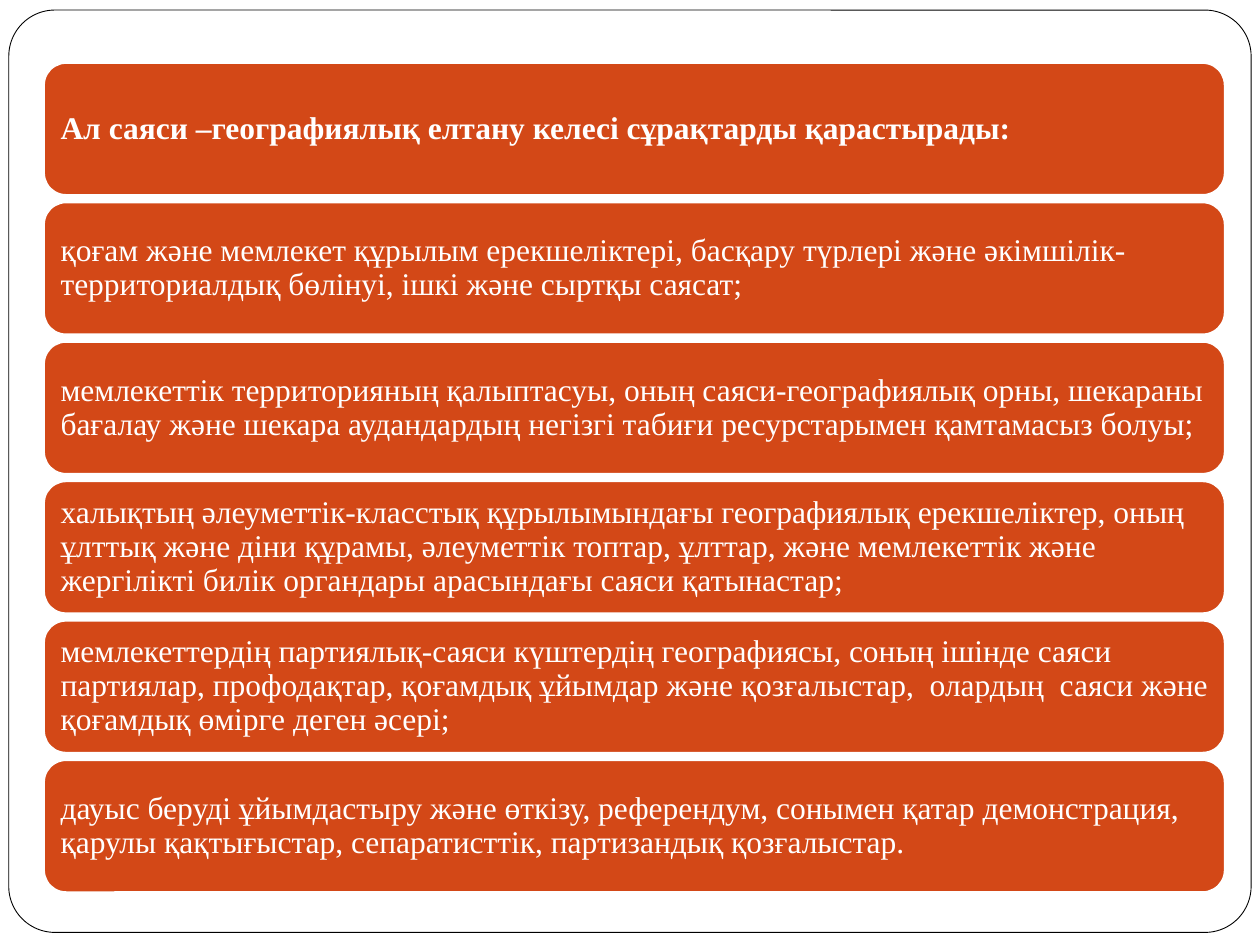
from pptx import Presentation
from pptx.dml.color import RGBColor
from pptx.enum.shapes import MSO_SHAPE
from pptx.enum.text import MSO_ANCHOR, PP_ALIGN
from pptx.util import Inches, Pt

ROUND = MSO_SHAPE.ROUNDED_RECTANGLE
MIDDLE = MSO_ANCHOR.MIDDLE
LEFT = PP_ALIGN.LEFT
WHITE = RGBColor(0xFF, 0xFF, 0xFF)
BLACK = RGBColor(0, 0, 0)
RUST = RGBColor(0xD3, 0x48, 0x17)
FONT = "Times New Roman"

# Content: heading first, then the questions
TITLE = "Ал саяси –географиялық елтану келесі сұрақтарды қарастырады:"
ITEMS = [
    "қоғам және мемлекет құрылым ерекшеліктері, басқару түрлері және "
    "әкімшілік-территориалдық бөлінуі, ішкі және сыртқы саясат;",
    "мемлекеттік территорияның қалыптасуы, оның саяси-географиялық орны, шекараны "
    "бағалау және шекара аудандардың негізгі табиғи ресурстарымен қамтамасыз болуы;",
    "халықтың әлеуметтік-класстық құрылымындағы географиялық ерекшеліктер, оның "
    "ұлттық және діни құрамы, әлеуметтік топтар, ұлттар, және мемлекеттік және "
    "жергілікті билік органдары арасындағы саяси қатынастар;",
    "мемлекеттердің партиялық-саяси күштердің географиясы, соның ішінде саяси "
    "партиялар, профодақтар, қоғамдық ұйымдар және қозғалыстар,  олардың  саяси және "
    "қоғамдық өмірге деген әсері;",
    "дауыс беруді ұйымдастыру және өткізу, референдум, сонымен қатар демонстрация, "
    "қарулы қақтығыстар, сепаратисттік, партизандық қозғалыстар.",
]

# Layout in inches: one column of equal rows
WIDE, HIGH = 10, 7.5
X, TOP, BASE, WIDTH = 0.35, 0.5, 7.08, 9.37
GAP = 0.06

deck = Presentation()
deck.slide_width, deck.slide_height = Inches(WIDE), Inches(HIGH)
slide = deck.slides.add_slide(deck.slide_layouts[6])


def panel(x, y, w, h, fill, line, weight):
    shape = slide.shapes.add_shape(ROUND, Inches(x), Inches(y), Inches(w), Inches(h))
    shape.shadow.inherit = False
    shape.fill.solid()
    shape.fill.fore_color.rgb = fill
    shape.line.color.rgb = line
    shape.line.width = Pt(weight)
    return shape


def write(shape, text, size=18, bold=False, color=WHITE):
    frame = shape.text_frame
    frame.word_wrap = True
    frame.vertical_anchor = MIDDLE
    frame.margin_left = Inches(0.08)
    frame.margin_right = frame.margin_top = frame.margin_bottom = Inches(0.07)
    para = frame.paragraphs[0]
    para.alignment = LEFT
    para.line_spacing = 0.9
    para.space_after = Pt(0.35 * size)
    run = para.add_run()
    run.text = text
    run.font.name = FONT
    run.font.size = Pt(size)
    run.font.bold = bold
    run.font.color.rgb = color


# Outer frame
frame = panel(0.07, 0.08, 9.86, 7.32, WHITE, BLACK, 0.5)
frame.adjustments[0] = 0.05

# Stacked boxes
rows = [TITLE] + ITEMS
step = (BASE - TOP + GAP) / len(rows)
for i, text in enumerate(rows):
    box = panel(X, TOP + i * step, WIDTH, step - GAP, RUST, WHITE, 1)
    write(box, text, bold=i == 0)

deck.save("out.pptx")
